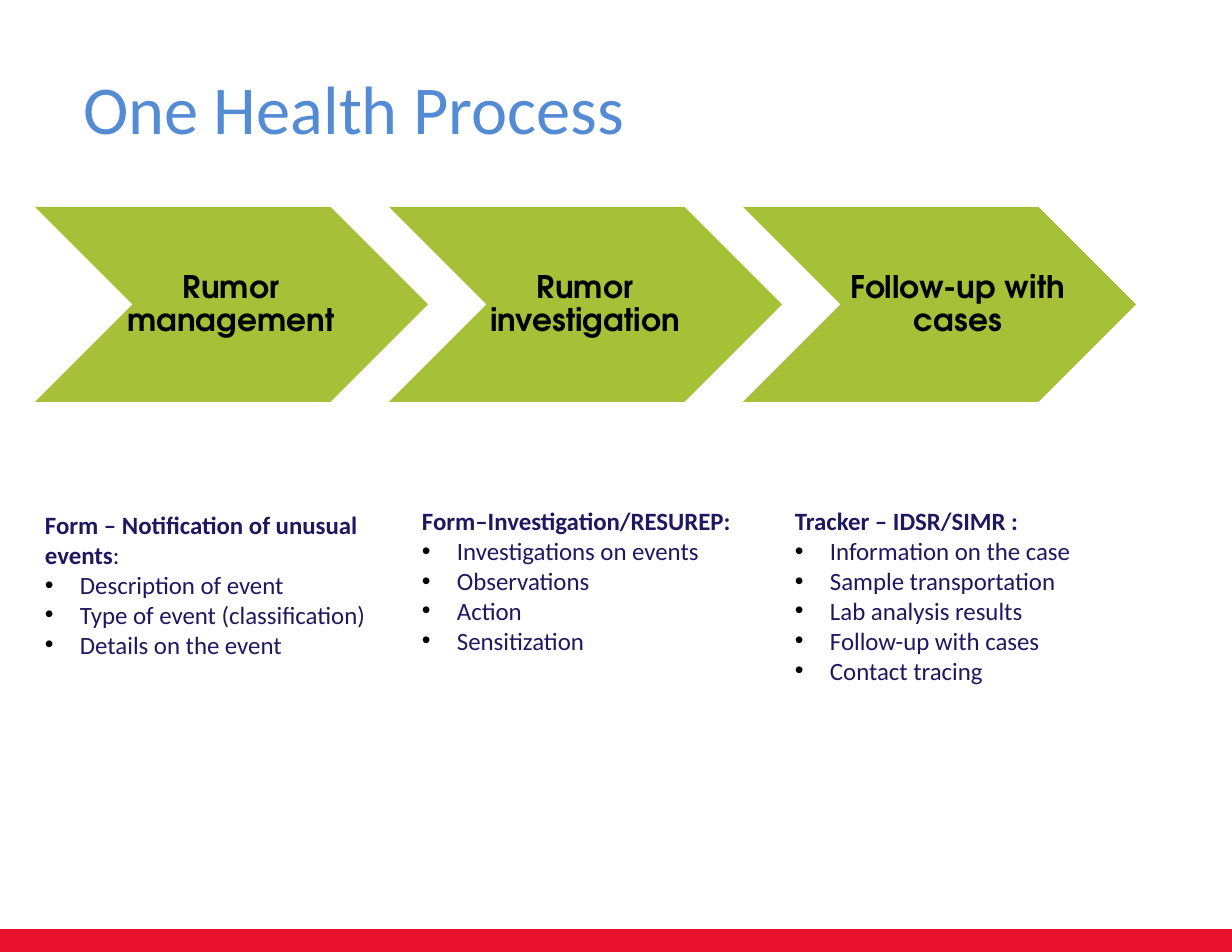
from lxml.etree import SubElement
from pptx import Presentation
from pptx.dml.color import RGBColor
from pptx.enum.shapes import MSO_SHAPE as Preset
from pptx.enum.text import MSO_ANCHOR as Anchor, MSO_AUTO_SIZE as AutoSize, PP_ALIGN as Align
from pptx.oxml.ns import qn
from pptx.util import Pt

PX = 914400 / 112
RED = RGBColor(0xE8, 0x11, 0x2D)
BLUE = RGBColor(0x53, 0x8C, 0xD5)
GREEN = RGBColor(0xA6, 0xC0, 0x38)
NAVY = RGBColor(0x1E, 0x18, 0x60)
BLACK = RGBColor(0, 0, 0)


def px(*lengths):
    return [round(length * PX) for length in lengths]


def add_run(paragraph, text, font, size, color, bold=False):
    run = paragraph.add_run()
    run.text = text
    run.font.name = font
    run.font.size = Pt(size)
    run.font.color.rgb = color
    run.font.bold = bold


presentation = Presentation()
presentation.slide_width, presentation.slide_height = px(1232, 952)
slide = presentation.slides.add_slide(presentation.slide_layouts.get_by_name("Comparison"))
shapes = slide.shapes

footer_bar = shapes.add_shape(Preset.RECTANGLE, *px(0, 931, 1232, 21))
footer_bar.shadow.inherit = False
footer_bar.fill.solid()
footer_bar.fill.fore_color.rgb = RED
footer_bar.line.color.rgb = RED
footer_bar.line.width = Pt(2)

title = shapes.title
title.left, title.top, title.width, title.height = px(72, 60, 906, 94)
title.text_frame.vertical_anchor = Anchor.TOP
title.text_frame.auto_size = AutoSize.NONE
title.text_frame.paragraphs[0].alignment = Align.LEFT
add_run(title.text_frame.paragraphs[0], "One Health Process", "Calibri", 44, BLUE)

steps = [("Rumor management", 113), ("Rumor investigation", 467), ("Follow-up with cases", 840)]
for index, (step, label_left) in enumerate(steps):
    chevron = shapes.add_shape(Preset.CHEVRON, *px(35 + 354 * index, 207, 393, 195))
    chevron.shadow.inherit = False
    chevron.fill.solid()
    chevron.fill.fore_color.rgb = GREEN
    chevron.line.fill.background()

    label = shapes.add_textbox(*px(label_left, 267, 236, 76))
    frame = label.text_frame
    frame.word_wrap = True
    frame.vertical_anchor = Anchor.MIDDLE
    frame.margin_left, frame.margin_top, frame.margin_right, frame.margin_bottom = px(3, 3, 3, 3)
    paragraph = frame.paragraphs[0]
    paragraph.alignment = Align.CENTER
    paragraph.line_spacing = 0.9
    add_run(paragraph, step, "TeX Gyre Adventor", 20, BLACK, True)

columns = [
    (1, (39, 504, 354, 193), 6, [("Form – Notification of unusual events", True), (":", False)],
     ["Description of event", "Type of event (classification)", "Details on the event"]),
    (2, (411, 495, 367, 193), 11, [("Form–Investigation/RESUREP:", True)],
     ["Investigations on events", "Observations", "Action", "Sensitization"]),
    (3, (784, 495, 367, 208), 11, [("Tracker – IDSR/SIMR :", True)],
     ["Information on the case", "Sample transportation", "Lab analysis results",
      "Follow-up with cases", "Contact tracing"]),
]
for number, box, inset, heading, items in columns:
    body = slide.placeholders[number]
    body.left, body.top, body.width, body.height = px(*box)
    frame = body.text_frame
    frame.word_wrap = True
    frame.auto_size = AutoSize.NONE
    frame.vertical_anchor = Anchor.TOP
    frame.margin_left, frame.margin_top, frame.margin_right, frame.margin_bottom = px(*[inset] * 4)

    paragraph = frame.paragraphs[0]
    paragraph.space_before = Pt(0)
    properties = paragraph._p.get_or_add_pPr()
    properties.set("marL", "0")
    properties.set("indent", "0")
    SubElement(properties, qn("a:buNone"))
    for text, bold in heading:
        add_run(paragraph, text, "Calibri", 16, NAVY, bold)

    for item in items:
        paragraph = frame.add_paragraph()
        paragraph.space_before = Pt(0)
        properties = paragraph._p.get_or_add_pPr()
        [indent] = px(35)
        properties.set("marL", str(indent))
        properties.set("indent", str(-indent))
        bullet_color = SubElement(properties, qn("a:buClr"))
        SubElement(bullet_color, qn("a:srgbClr"), val=str(BLACK))
        SubElement(properties, qn("a:buFont"), typeface="Arial")
        SubElement(properties, qn("a:buChar"), char="•")
        add_run(paragraph, item, "Calibri", 16, NAVY)

unused = slide.placeholders[4].element
unused.getparent().remove(unused)

presentation.save("out.pptx")
